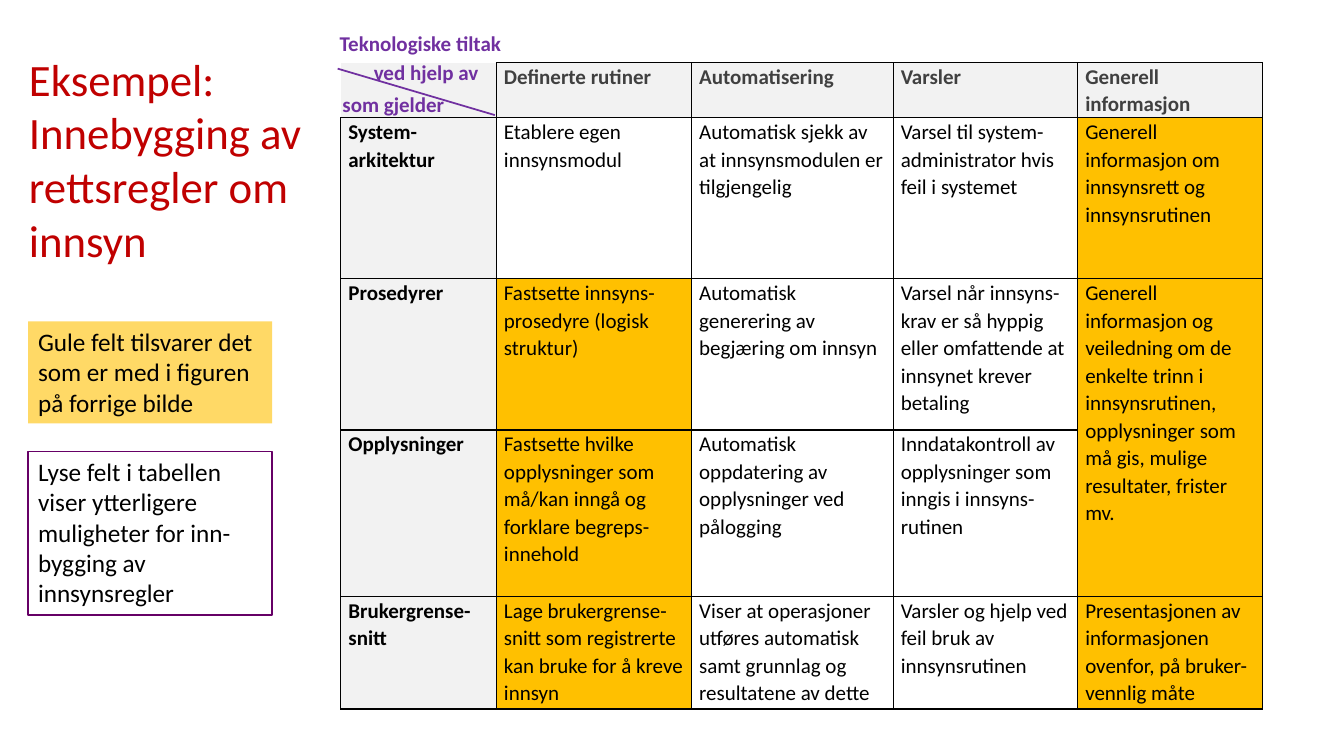
import dataclasses

import pptx
import pptx.dml.color
import pptx.enum.shapes
import pptx.enum.text
import pptx.oxml.ns
import pptx.util
from lxml import etree

Cm = pptx.util.Cm
Pt = pptx.util.Pt
qn = pptx.oxml.ns.qn


@dataclasses.dataclass(frozen=True)
class Theme:
    font: str = "Calibri"
    title_size: int = 32
    note_size: int = 18
    table_size: int = 15
    black: str = "000000"
    heading: str = "404040"
    title: str = "C00000"
    violet: str = "7030A0"
    frame: str = "660066"
    grey: str = "F2F2F2"
    amber: str = "FFC000"
    light_amber: str = "FFD966"


THEME = Theme()
COLUMN_WIDTHS = (3.92, 4.92, 5.08, 4.65, 4.65)
ROW_HEIGHTS = (0.94, 4.06, 3.81, 4.19, 2.84)
TABLE_ROWS = (
    ("", "Definerte rutiner", "Automatisering", "Varsler", "Generell informasjon"),
    ("System-arkitektur", "Etablere egen innsynsmodul",
     "Automatisk sjekk av at innsynsmodulen er tilgjengelig",
     "Varsel til system-administrator hvis feil i systemet",
     "Generell informasjon om innsynsrett og innsynsrutinen"),
    ("Prosedyrer", "Fastsette innsyns-prosedyre (logisk struktur)",
     "Automatisk generering av begjæring om innsyn",
     "Varsel når innsyns-krav er så hyppig eller omfattende at innsynet krever betaling",
     "Generell informasjon og veiledning om de enkelte trinn i innsynsrutinen, "
     "opplysninger som må gis, mulige resultater, frister mv."),
    ("Opplysninger",
     "Fastsette hvilke opplysninger som må/kan inngå og forklare begreps-innehold",
     "Automatisk oppdatering av opplysninger ved pålogging",
     "Inndatakontroll av opplysninger som inngis i innsyns-rutinen", ""),
    ("Brukergrense-snitt",
     "Lage brukergrense-snitt som registrerte kan bruke for å kreve innsyn",
     "Viser at operasjoner utføres automatisk samt grunnlag og resultatene av dette",
     "Varsler og hjelp ved feil bruk av innsynsrutinen",
     "Presentasjonen av informasjonen ovenfor, på bruker-vennlig måte"),
)
AMBER_CELLS = {(2, 1), (3, 1), (4, 1), (1, 4), (2, 4), (3, 4), (4, 4)}


def rgb(color):
    return pptx.dml.color.RGBColor.from_string(color)


def add_run(paragraph, text, size, color, bold=False):
    run = paragraph.add_run()
    run.text = text
    run.font.name = THEME.font
    run.font.size = Pt(size)
    run.font.bold = bold
    run.font.color.rgb = rgb(color)


def write_paragraphs(text_frame, paragraphs, size, color, bold=False):
    for index, text in enumerate(paragraphs):
        paragraph = text_frame.paragraphs[0] if index == 0 else text_frame.add_paragraph()
        paragraph.alignment = pptx.enum.text.PP_ALIGN.LEFT
        for line_index, line in enumerate(text.split("\n")):
            if line_index:
                paragraph.add_line_break()
            add_run(paragraph, line, size, color, bold)


def add_label(slide, box, paragraphs, size, color, bold=False):
    shape = slide.shapes.add_textbox(*map(Cm, box))
    shape.text_frame.word_wrap = False
    shape.text_frame.auto_size = pptx.enum.text.MSO_AUTO_SIZE.SHAPE_TO_FIT_TEXT
    write_paragraphs(shape.text_frame, paragraphs, size, color, bold)


def add_note(slide, box, paragraphs, wrap, fill=None, line=None):
    shape = slide.shapes.add_shape(pptx.enum.shapes.MSO_SHAPE.RECTANGLE, *map(Cm, box))
    shape.shadow.inherit = False
    if fill:
        shape.fill.solid()
        shape.fill.fore_color.rgb = rgb(fill)
    else:
        shape.fill.background()
    if line:
        shape.line.color.rgb = rgb(line)
        shape.line.width = Pt(1.25)
    else:
        shape.line.fill.background()
    text_frame = shape.text_frame
    text_frame.word_wrap = wrap
    text_frame.auto_size = pptx.enum.text.MSO_AUTO_SIZE.SHAPE_TO_FIT_TEXT
    text_frame.vertical_anchor = pptx.enum.text.MSO_ANCHOR.TOP
    write_paragraphs(text_frame, paragraphs, THEME.note_size, THEME.black)


def set_borders(cell, visible_sides):
    properties = cell._tc.get_or_add_tcPr()
    for side in "LRTB":
        border = etree.SubElement(properties, qn(f"a:ln{side}"), w=str(Pt(1)))
        if side in visible_sides:
            fill = etree.SubElement(border, qn("a:solidFill"))
            etree.SubElement(fill, qn("a:srgbClr"), val=THEME.black)
        else:
            etree.SubElement(border, qn("a:noFill"))


def format_cell(cell, row, column, text):
    cell.margin_left = cell.margin_right = Cm(0.19)
    cell.margin_top = cell.margin_bottom = 0
    set_borders(cell, "RB" if row == column == 0 else "LRTB")
    if row == 0 or column == 0:
        fill = THEME.grey
    else:
        fill = THEME.amber if (row, column) in AMBER_CELLS else None
    if fill:
        cell.fill.solid()
        cell.fill.fore_color.rgb = rgb(fill)
    else:
        cell.fill.background()
    if text:
        color = THEME.heading if row == 0 else THEME.black
        write_paragraphs(cell.text_frame, [text], THEME.table_size, color,
                         bold=row == 0 or column == 0)
        cell.text_frame.paragraphs[0].line_spacing = 1.07


def add_measures_table(slide):
    table = slide.shapes.add_table(
        len(ROW_HEIGHTS), len(COLUMN_WIDTHS), Cm(8.59), Cm(1.58),
        Cm(sum(COLUMN_WIDTHS)), Cm(sum(ROW_HEIGHTS))).table
    table.first_row = False
    table.horz_banding = False
    for column, width in zip(table.columns, COLUMN_WIDTHS):
        column.width = Cm(width)
    for row, height in zip(table.rows, ROW_HEIGHTS):
        row.height = Cm(height)
    table.cell(2, 4).merge(table.cell(3, 4))
    for row, texts in enumerate(TABLE_ROWS):
        for column, text in enumerate(texts):
            format_cell(table.cell(row, column), row, column, text)


def add_diagonal(slide, start, end):
    connector = slide.shapes.add_connector(
        pptx.enum.shapes.MSO_CONNECTOR.STRAIGHT, *map(Cm, start + end))
    connector.line.color.rgb = rgb(THEME.violet)
    connector.line.width = Pt(1.25)
    etree.SubElement(connector._element.spPr, qn("a:effectLst"))


def main():
    presentation = pptx.Presentation()
    presentation.slide_width = Cm(33.87)
    presentation.slide_height = Cm(19.05)
    slide = presentation.slides.add_slide(presentation.slide_layouts[6])

    add_measures_table(slide)
    add_label(slide, (0.48, 1.17, 7.47, 5.74),
              ["Eksempel:", "Innebygging av", "rettsregler om", "innsyn"],
              THEME.title_size, THEME.title)
    add_note(slide, (0.71, 8.1, 6.15, 2.57),
             ["Gule felt tilsvarer det", "som er med i figuren", "på forrige bilde"],
             wrap=False, fill=THEME.light_amber)
    add_note(slide, (0.71, 11.38, 6.15, 4.11),
             ["Lyse felt i tabellen", "viser ytterligere",
              "muligheter for inn-\nbygging av innsynsregler"],
             wrap=True, line=THEME.frame)
    for box, text in (
        ((9.17, 1.37, 3.2, 0.89), "ved hjelp av"),
        ((8.38, 2.18, 3.15, 0.89), "som gjelder"),
        ((8.31, 0.64, 4.62, 0.89), "Teknologiske tiltak"),
    ):
        add_label(slide, box, [text], THEME.table_size, THEME.violet, bold=True)
    add_diagonal(slide, (8.51, 1.73), (12.47, 2.9))

    presentation.save("out.pptx")


if __name__ == "__main__":
    main()
